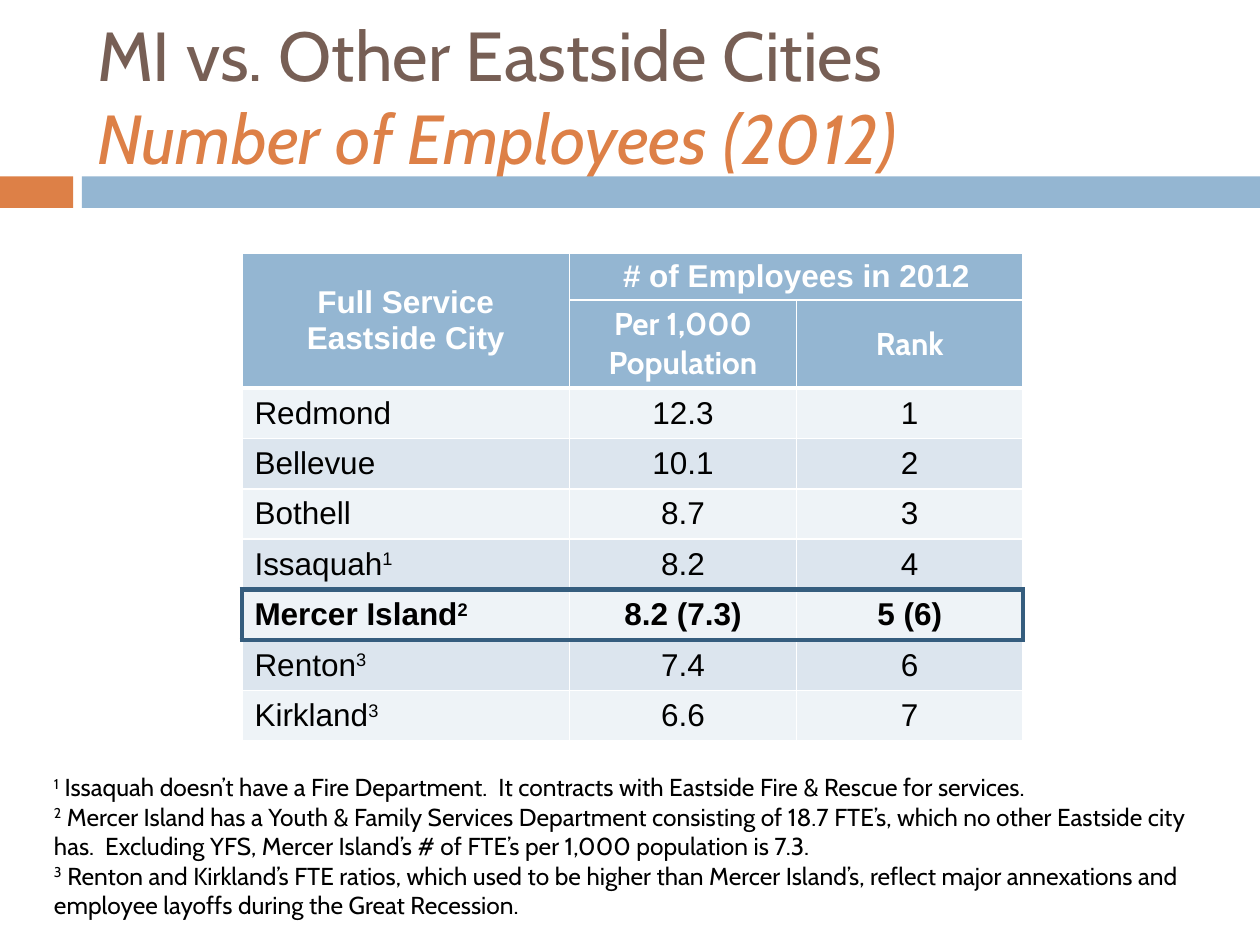
from lxml.etree import SubElement
from pptx import Presentation
from pptx.dml.color import RGBColor as RGB
from pptx.enum.shapes import MSO_SHAPE as Shape
from pptx.enum.text import MSO_ANCHOR as Anchor, MSO_AUTO_SIZE as AutoSize, PP_ALIGN as Align
from pptx.oxml.ns import qn
from pptx.util import Inches, Pt

THEME = {
    "orange": "DD8047", "blue": "94B6D2", "brown": "775F55", "navy": "355D7E",
    "white": "FFFFFF", "black": "000000", "bands": ("EEF3F7", "DCE5EE"),
    "heading": "Cabin", "body": "Arial",
    "title_size": 39.6, "table_size": 18, "note_size": 14,
}


def write(paragraph, text, size, color, raised=False, **formats):
    """Add one run, formatted from the given font values."""
    run = paragraph.add_run()
    run.text = text
    run.font.color.rgb = RGB.from_string(THEME[color])
    for key, value in {"size": Pt(THEME[size]), **formats}.items():
        setattr(run.font, key, value)
    if raised:
        run._r.get_or_add_rPr().set("baseline", "30000")


def outline(cell, color, left=1, right=1, top=1, bottom=1):
    """Draw the four cell borders, with widths in points."""
    for side, width in zip("LRTB", (left, right, top, bottom)):
        line = SubElement(cell._tc.get_or_add_tcPr(), qn(f"a:ln{side}"), w=str(Pt(width)))
        fill = SubElement(line, qn("a:solidFill"))
        SubElement(fill, qn("a:srgbClr"), val=THEME[color])


deck = Presentation()
deck.slide_width, deck.slide_height = Inches(10), Inches(7.5)
slide = deck.slides.add_slide(deck.slide_layouts[5])

# Band under the title
for left, width, color in ((0, 0.58, "orange"), (0.65, 9.35, "blue")):
    band = slide.shapes.add_shape(
        Shape.RECTANGLE, Inches(left), Inches(1.4), Inches(width), Inches(0.25))
    band.shadow.inherit = False
    band.fill.solid()
    band.fill.fore_color.rgb = RGB.from_string(THEME[color])
    band.line.fill.background()

# Title
title = slide.shapes.title
title_box = {"left": 0.67, "top": 0.17, "width": 8.92, "height": 1.17}
for key, value in title_box.items():
    setattr(title, key, Inches(value))
title.text_frame.auto_size = AutoSize.NONE
title.text_frame.vertical_anchor = Anchor.MIDDLE
heading = title.text_frame.paragraphs[0]
heading.alignment = Align.LEFT
write(heading, "MI vs. Other Eastside Cities", "title_size", "brown", name=THEME["heading"])
heading.add_line_break()
write(heading, "Number of Employees (2012)", "title_size", "orange",
      name=THEME["heading"], italic=True)

# Employee table: "^" sets off a footnote mark
headers = [
    ["Full Service\nEastside City", "# of Employees in 2012", ""],
    ["", "Per 1,000 Population", "Rank"],
]
cities = [
    ["Redmond", "12.3", "1"],
    ["Bellevue", "10.1", "2"],
    ["Bothell", "8.7", "3"],
    ["Issaquah^1", "8.2", "4"],
    ["Mercer Island^2", "8.2 (7.3)", "5 (6)"],
    ["Renton^3", "7.4", "6"],
    ["Kirkland^3", "6.6", "7"],
]
home_row = 6
columns = [2.6, 1.8, 1.8]
rows = [0.37, 0.7] + [0.4] * len(cities)
table_left, table_top = 1.92, 2.01
employees = slide.shapes.add_table(
    len(rows), len(columns), Inches(table_left), Inches(table_top),
    Inches(sum(columns)), Inches(sum(rows))).table
for column, width in zip(employees.columns, columns):
    column.width = Inches(width)
for row, height in zip(employees.rows, rows):
    row.height = Inches(height)
employees.cell(0, 0).merge(employees.cell(1, 0))
employees.cell(0, 1).merge(employees.cell(0, 2))

for r, texts in enumerate(headers + cities):
    is_header = r < len(headers)
    for c, text in enumerate(texts):
        cell = employees.cell(r, c)
        above_rule = r == 1 or (r, c) == (0, 0)
        outline(cell, "white", top=3 if r == 2 else 1, bottom=3 if above_rule else 1)
        cell.fill.solid()
        cell.fill.fore_color.rgb = RGB.from_string(
            THEME["blue"] if is_header else THEME["bands"][r % 2])
        cell.vertical_anchor = Anchor.MIDDLE
        cell.margin_top = cell.margin_bottom = Inches(0.03)
        for i, line in enumerate(text.split("\n") if text else []):
            entry = cell.text_frame.add_paragraph() if i else cell.text_frame.paragraphs[0]
            entry.alignment = Align.CENTER if is_header or c else Align.LEFT
            label, _, mark = line.partition("^")
            formats = {
                "size": "table_size", "color": "white" if is_header else "black",
                "name": THEME["heading" if r == 1 else "body"],
                "bold": is_header or r == home_row,
            }
            write(entry, label, **formats)
            if mark:
                write(entry, mark, raised=True, **formats)

# Footnotes
notes = [
    "Issaquah doesn’t have a Fire Department.  It contracts with Eastside Fire & Rescue "
    "for services.",
    "Mercer Island has a Youth & Family Services Department consisting of 18.7 FTE’s, which "
    "no other Eastside city has.  Excluding YFS, Mercer Island’s # of FTE’s per 1,000 "
    "population is 7.3.",
    "Renton and Kirkland’s FTE ratios, which used to be higher than Mercer Island’s, reflect "
    "major annexations and employee layoffs during the Great Recession.",
]
footnotes = slide.shapes.add_textbox(
    Inches(0.33), Inches(6.08), Inches(9.25), Inches(1.28)).text_frame
footnotes.word_wrap = True
footnotes.auto_size = AutoSize.SHAPE_TO_FIT_TEXT
for number, note in enumerate(notes, 1):
    footnote = footnotes.paragraphs[0] if number == 1 else footnotes.add_paragraph()
    write(footnote, str(number), "note_size", "black", raised=True, name=THEME["heading"])
    write(footnote, f" {note}", "note_size", "black", name=THEME["heading"])

# Frame around the Mercer Island row
frame = slide.shapes.add_table(
    1, 1, Inches(table_left), Inches(table_top + sum(rows[:home_row])),
    Inches(sum(columns)), Inches(rows[home_row])).table
frame.first_row = frame.horz_banding = False
frame_cell = frame.cell(0, 0)
outline(frame_cell, "navy", 3, 3, 3, 3)
frame_cell.fill.background()

deck.save("out.pptx")
